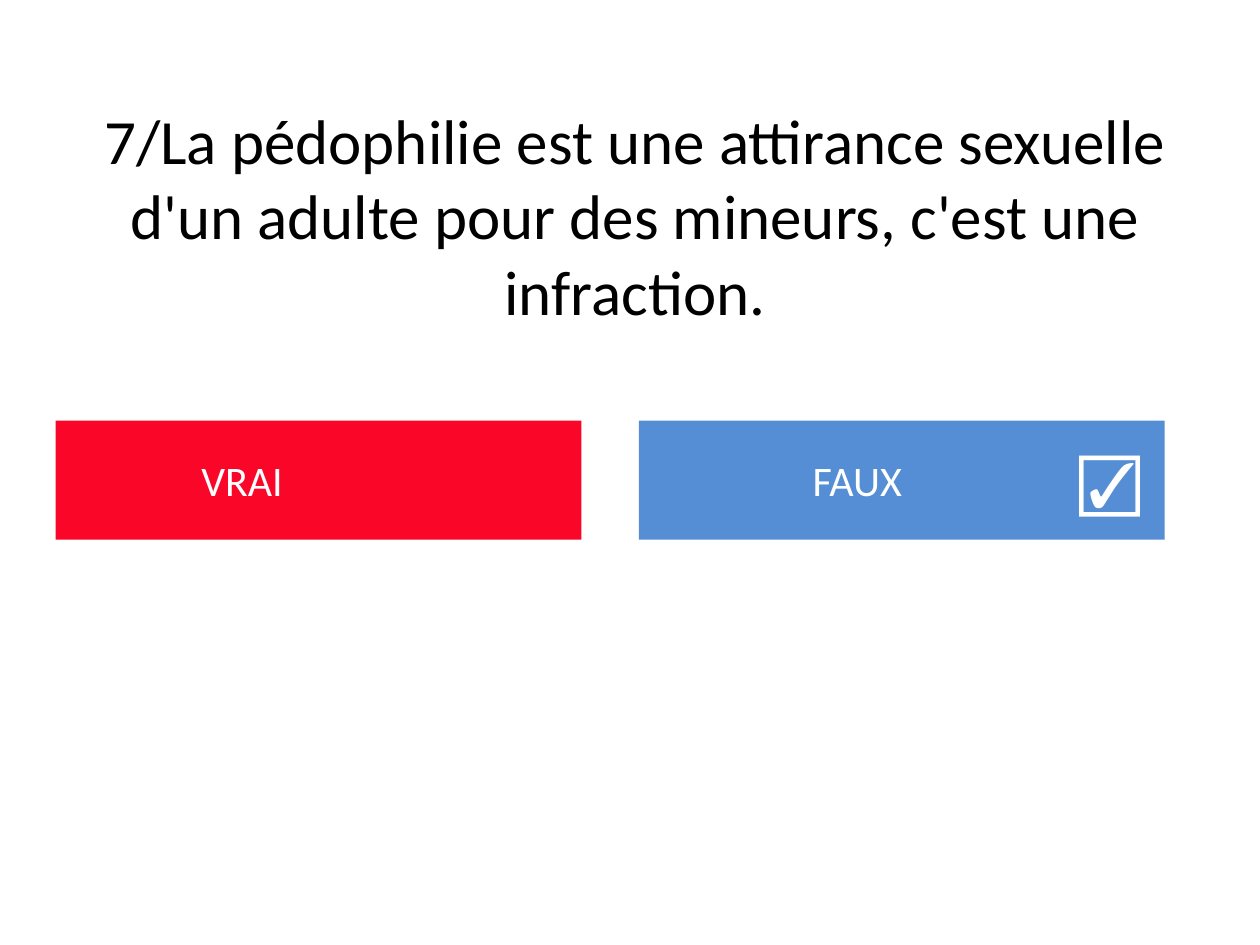
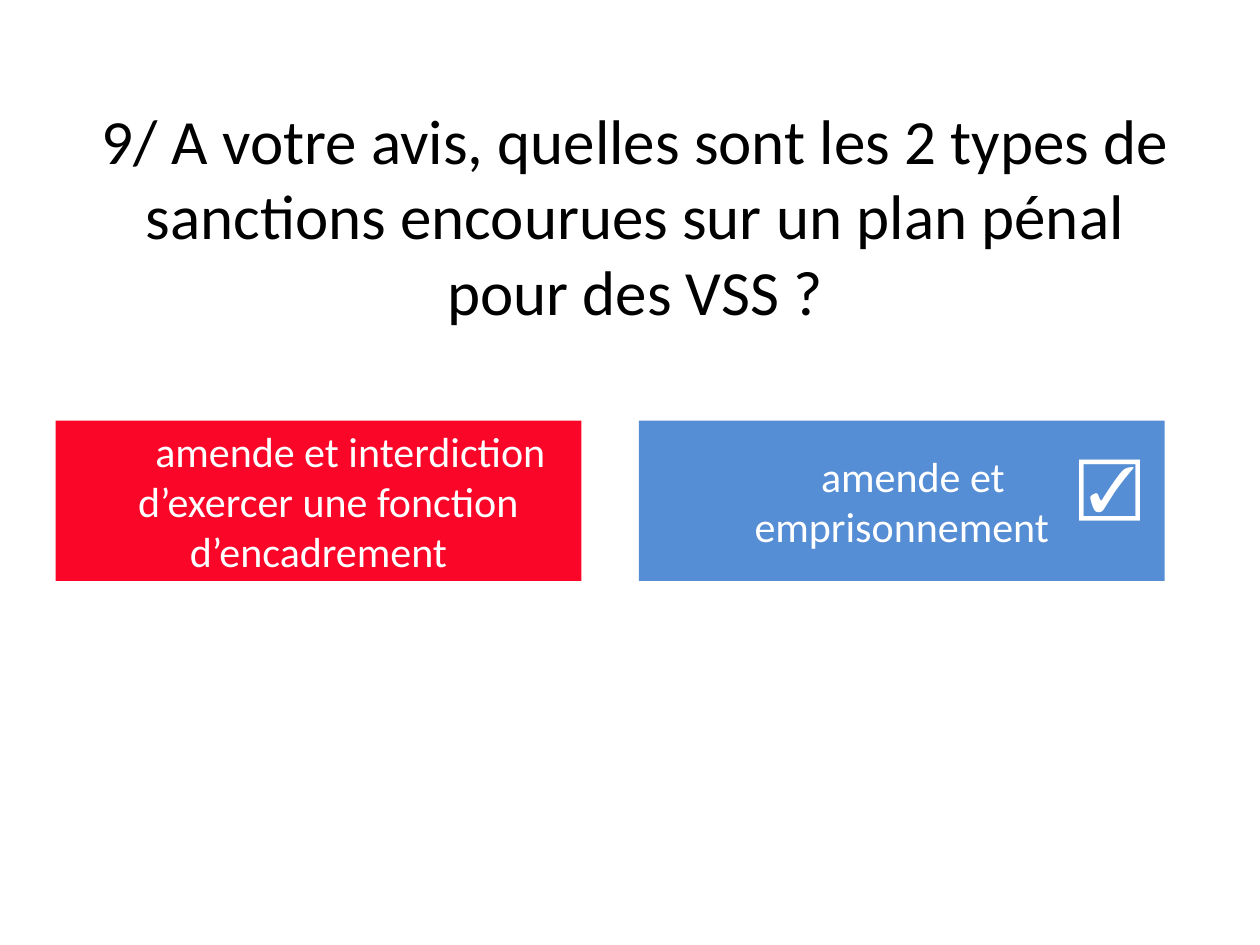
import dataclasses

import pptx
import pptx.dml.color
import pptx.enum.shapes
import pptx.enum.text
import pptx.util

Cm = pptx.util.Cm
Align = pptx.enum.text.PP_ALIGN
Anchor = pptx.enum.text.MSO_ANCHOR
AutoSize = pptx.enum.text.MSO_AUTO_SIZE


@dataclasses.dataclass(frozen=True)
class Theme:
    """Colours, font and type sizes shared by the slides."""

    paper: str = "FFFFFF"
    ink: str = "000000"
    red: str = "FA0629"
    blue: str = "558ED5"
    font: str = "Calibri"
    question_size: int = 36
    answer_size: int = 24
    tick_size: int = 36


THEME = Theme()
QUESTION_BOX = (1.5, 1.93, 22.6, 4.8)
ANSWER_LEFT, ANSWER_TOP, ANSWER_WIDTH, ANSWER_GAP = 1.12, 8.48, 10.6, 1.16
TICK_OFFSET, TICK_WIDTH, TICK_HEIGHT = 8.61, 1.24, 1.8

QUIZ = [
    {
        "question": "7/La pédophilie est une attirance sexuelle d'un adulte "
                    "pour des mineurs, c'est une infraction.",
        "height": 2.4,
        "tick_drop": 0.3,
        "align": Align.LEFT,
        "answers": [[("VRAI", 2.69)], [("FAUX", 3.25)]],
    },
    {
        "question": "9/ A votre avis, quelles sont les 2 types de sanctions "
                    "encourues sur un plan pénal pour des VSS ?",
        "height": 3.23,
        "tick_drop": 0.38,
        "align": Align.CENTER,
        "answers": [
            [("amende et interdiction", 1.29),
             ("d’exercer une fonction d’encadrement", 0.4)],
            [("amende et emprisonnement", 0.45)],
        ],
    },
]


def apply_values(target, values):
    """Set each attribute of the target from a dict."""
    for name, value in values.items():
        setattr(target, name, value)


def paint(shape, colour):
    """Fill a shape with one solid colour."""
    shape.fill.solid()
    shape.fill.fore_color.rgb = pptx.dml.color.RGBColor.from_string(colour)


def write_paragraph(para, text, size, colour, align, indent=0):
    """Write one formatted paragraph with an optional first-line indent in cm."""
    para.alignment = align
    if indent:
        para._p.get_or_add_pPr().set("indent", str(Cm(indent)))
    span = para.add_run()
    span.text = text
    apply_values(span.font, {"name": THEME.font, "size": pptx.util.Pt(size)})
    span.font.color.rgb = pptx.dml.color.RGBColor.from_string(colour)


def add_question(page, text, box):
    """Place the question in the title placeholder."""
    title = page.shapes.title
    left, top, width, height = map(Cm, box)
    apply_values(title, {"left": left, "top": top, "width": width, "height": height})
    paint(title, THEME.paper)
    apply_values(title.text_frame, {
        "word_wrap": True, "auto_size": AutoSize.NONE, "vertical_anchor": Anchor.MIDDLE})
    write_paragraph(title.text_frame.paragraphs[0], text,
                    THEME.question_size, THEME.ink, Align.CENTER)


def add_answer(page, lines, box, colour, align):
    """Draw one answer panel with its text."""
    panel = page.shapes.add_shape(
        pptx.enum.shapes.MSO_SHAPE.RECTANGLE, *map(Cm, box))
    panel.shadow.inherit = False
    paint(panel, colour)
    panel.line.fill.background()
    frame = panel.text_frame
    apply_values(frame, {"word_wrap": True, "vertical_anchor": Anchor.MIDDLE})
    for number, (text, indent) in enumerate(lines):
        para = frame.add_paragraph() if number else frame.paragraphs[0]
        write_paragraph(para, text, THEME.answer_size, THEME.paper, align, indent)


def add_tick(page, box, drop):
    """Mark the answer in the given box as correct."""
    left, top = box[:2]
    tick = page.shapes.add_textbox(
        Cm(left + TICK_OFFSET), Cm(top + drop), Cm(TICK_WIDTH), Cm(TICK_HEIGHT))
    apply_values(tick.text_frame, {
        "word_wrap": False, "auto_size": AutoSize.SHAPE_TO_FIT_TEXT})
    write_paragraph(tick.text_frame.paragraphs[0], "☑",
                    THEME.tick_size, THEME.paper, Align.LEFT)


def add_quiz_page(deck, item):
    """Build a question slide with two answers, the second one correct."""
    page = deck.slides.add_slide(deck.slide_layouts.get_by_name("Title Only"))
    add_question(page, item["question"], QUESTION_BOX)
    for column, (lines, colour) in enumerate(
            zip(item["answers"], (THEME.red, THEME.blue))):
        left = ANSWER_LEFT + column * (ANSWER_WIDTH + ANSWER_GAP)
        box = (left, ANSWER_TOP, ANSWER_WIDTH, item["height"])
        add_answer(page, lines, box, colour, item["align"])
    add_tick(page, box, item["tick_drop"])


def main():
    """Build and save the deck."""
    deck = pptx.Presentation()
    apply_values(deck, {"slide_width": Cm(25.4), "slide_height": Cm(19.05)})
    for item in QUIZ:
        add_quiz_page(deck, item)
    deck.save("out.pptx")


if __name__ == "__main__":
    main()
